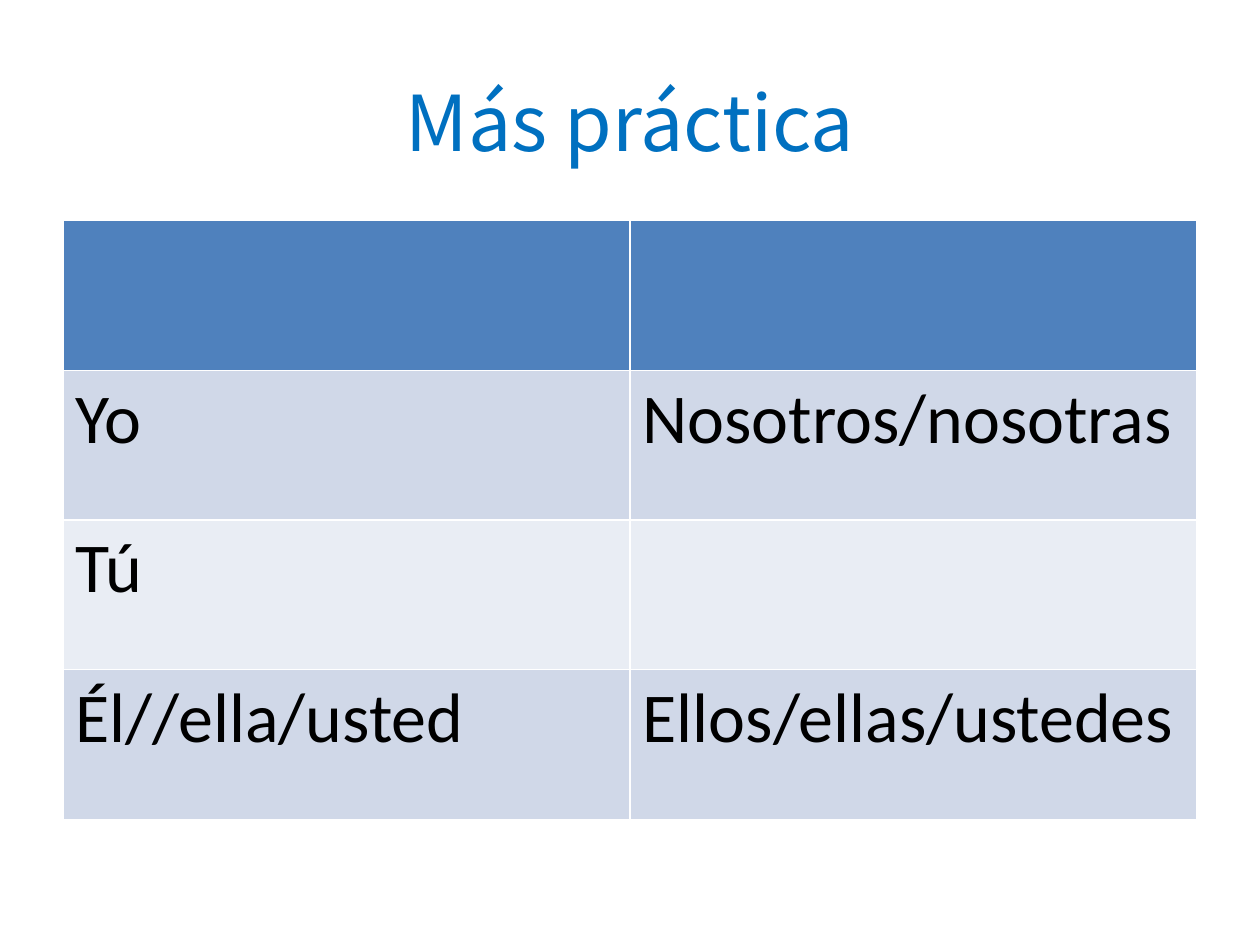
"""Build a Spanish pronoun practice slide with a title and a table."""
from pptx import Presentation
from pptx.dml.color import RGBColor
from pptx.enum.text import MSO_ANCHOR, PP_ALIGN
from pptx.util import Cm, Pt


def rgb(value):
    return RGBColor.from_string(value)


class SlideBuilder:
    title_font, body_font = "Noto Sans CJK KR", "Calibri"
    title_color, text_color = "0070C0", "000000"
    header_fill, band_fills = "4F81BD", ("E9EDF4", "D0D8E8")

    def __init__(self, prs):
        self.s = prs.slides.add_slide(prs.slide_layouts[5])

    def style(self, p, font, size, color, align):
        p.alignment = align
        for r in p.runs:
            r.font.name = font
            r.font.size = Pt(size)
            r.font.bold = False
            r.font.color.rgb = rgb(color)

    def title(self, text, left, top, width, height):
        sp = self.s.shapes.title
        sp.left, sp.top, sp.width, sp.height = Cm(left), Cm(top), Cm(width), Cm(height)
        tf = sp.text_frame
        tf.text = text
        tf.vertical_anchor = MSO_ANCHOR.MIDDLE
        self.style(tf.paragraphs[0], self.title_font, 44, self.title_color, PP_ALIGN.CENTER)

    def table(self, rows, left, top, width, height):
        frame = self.s.shapes.add_table(
            len(rows), len(rows[0]), Cm(left), Cm(top), Cm(width), Cm(height))
        for i, row in enumerate(rows):
            fill = self.band_fills[i % 2] if i else self.header_fill
            for j, text in enumerate(row):
                cell = frame.table.cell(i, j)
                cell.fill.solid()
                cell.fill.fore_color.rgb = rgb(fill)
                if text:
                    cell.text_frame.text = text
                    self.style(cell.text_frame.paragraphs[0], self.body_font, 40,
                               self.text_color, PP_ALIGN.LEFT)


def main():
    prs = Presentation()
    prs.slide_width, prs.slide_height = Cm(25.4), Cm(19.05)
    slide = SlideBuilder(prs)
    slide.title("Más práctica", 1.27, 0.85, 22.86, 3.18)
    slide.table([
        ("", ""),
        ("Yo", "Nosotros/nosotras"),
        ("Tú", ""),
        ("Él//ella/usted", "Ellos/ellas/ustedes"),
    ], 1.27, 4.45, 22.86, 12.07)
    prs.save("out.pptx")


if __name__ == "__main__":
    main()
